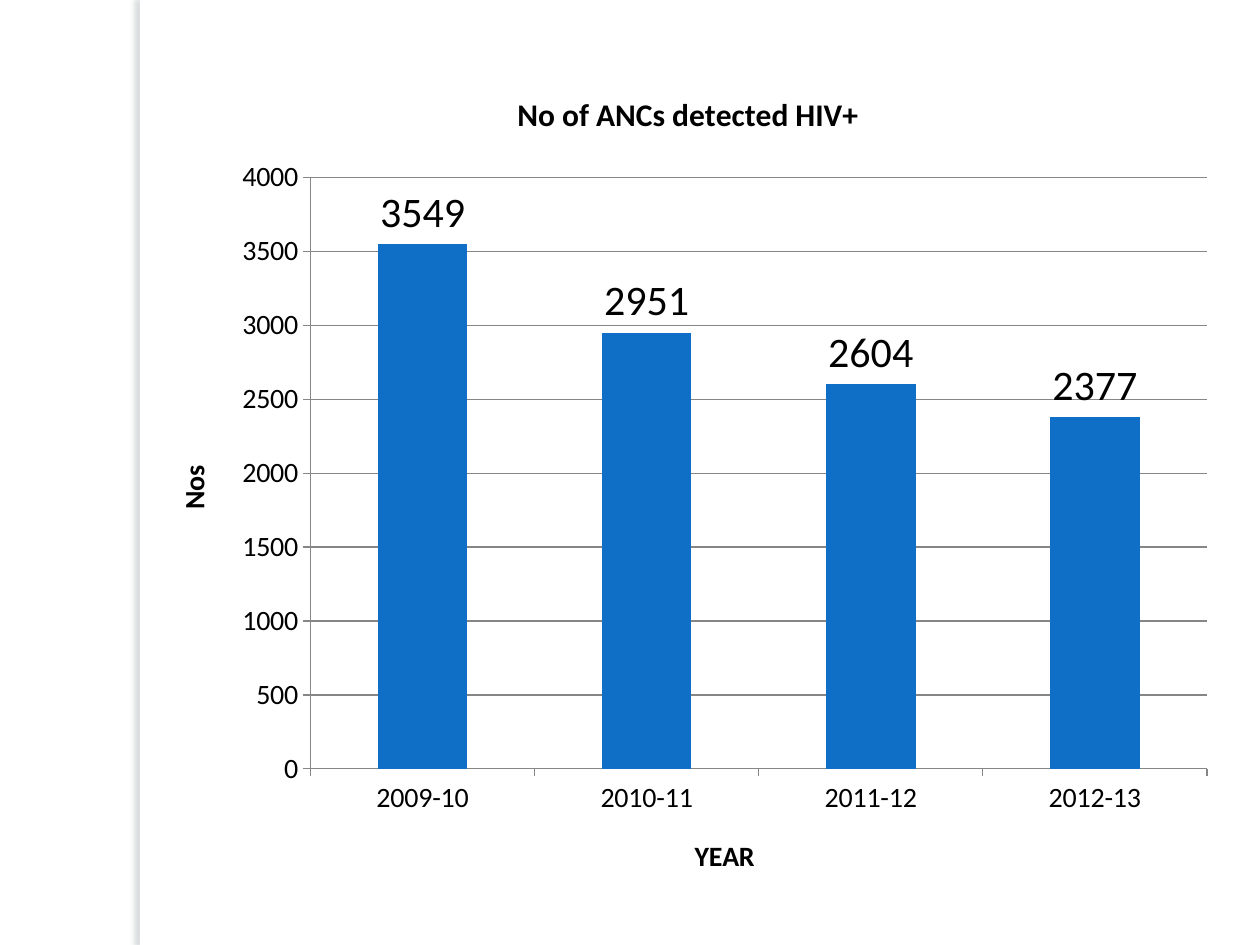
from dataclasses import dataclass

from lxml import etree
from pptx import Presentation
from pptx.chart.data import CategoryChartData
from pptx.dml.color import RGBColor as RGB
from pptx.enum.chart import XL_CHART_TYPE as ChartType
from pptx.enum.chart import XL_LABEL_POSITION as LabelPos
from pptx.enum.chart import XL_TICK_MARK as Tick
from pptx.enum.shapes import MSO_SHAPE as Shape
from pptx.oxml import parse_xml
from pptx.oxml.ns import nsdecls
from pptx.util import Inches, Pt


@dataclass(frozen=True)
class Theme:
    font: str = "Calibri"
    white: RGB = RGB(0xFF, 0xFF, 0xFF)
    text: RGB = RGB(0, 0, 0)
    bar: RGB = RGB(0x0F, 0x6F, 0xC6)
    line: RGB = RGB(0x86, 0x86, 0x86)
    shadow: str = "6C7A7C"
    title: Pt = Pt(18)
    axis: Pt = Pt(16)
    label: Pt = Pt(24)


theme = Theme()


def style(font, size, bold=False):
    font.name, font.size, font.bold = theme.font, size, bold
    font.color.rgb = theme.text


def set_title(owner, text, size):
    tf = (owner.chart_title if hasattr(owner, "chart_title") else owner.axis_title).text_frame
    tf.text = text
    style(tf.paragraphs[0].runs[0].font, size, bold=True)


prs = Presentation()
prs.slide_width, prs.slide_height = Inches(10), Inches(7.5)
W, H = prs.slide_width, prs.slide_height
s = prs.slides.add_slide(prs.slide_layouts[6])
s.background.fill.solid()
s.background.fill.fore_color.rgb = theme.white

# White edge strip with a soft shadow to its left
strip = s.shapes.add_shape(Shape.RECTANGLE, int(W * 0.111), 0, int(W * 0.008), H)
strip.fill.solid()
strip.fill.fore_color.rgb = theme.white
strip.line.fill.background()
strip.shadow.inherit = False
effects = strip.fill._xPr.find("{*}effectLst")
effects.append(parse_xml(
    f'<a:outerShdw {nsdecls("a")} blurRad="{Pt(3)}" dist="{Pt(3)}" dir="10800000" '
    f'algn="tl" rotWithShape="0"><a:srgbClr val="{theme.shadow}">'
    '<a:alpha val="25000"/></a:srgbClr></a:outerShdw>'))

# Column chart
data = CategoryChartData()
data.categories = ["2009-10", "2010-11", "2011-12", "2012-13"]
data.add_series("No of ANCs detected HIV+", [3549, 2951, 2604, 2377])
chart = s.shapes.add_chart(
    ChartType.COLUMN_CLUSTERED, int(W * 0.117), int(H / 15),
    int(W * 0.858), int(H * 0.89), data).chart
style(chart.font, theme.axis)
chart.has_legend = False
chart.has_title = True
set_title(chart, "No of ANCs detected HIV+", theme.title)

# Axes
for axis, title in ((chart.category_axis, "YEAR"), (chart.value_axis, "Nos")):
    set_title(axis, title, theme.axis)
    style(axis.tick_labels.font, theme.axis)
    axis.major_tick_mark, axis.minor_tick_mark = Tick.OUTSIDE, Tick.NONE
    axis.format.line.color.rgb = theme.line
    axis.format.line.width = Pt(0.75)
values = chart.value_axis
values.minimum_scale, values.maximum_scale, values.major_unit = 0, 4000, 500
values.has_major_gridlines = True
values.major_gridlines.format.line.color.rgb = theme.line
values.major_gridlines.format.line.width = Pt(0.75)

# Bars and their values
plot = chart.plots[0]
plot.gap_width = 150
plot.vary_by_categories = False
bars = plot.series[0]
bars.format.fill.solid()
bars.format.fill.fore_color.rgb = theme.bar
labels = bars.data_labels
labels.show_value = True
labels.position = LabelPos.OUTSIDE_END
style(labels.font, theme.label)

prs.save("out.pptx")
